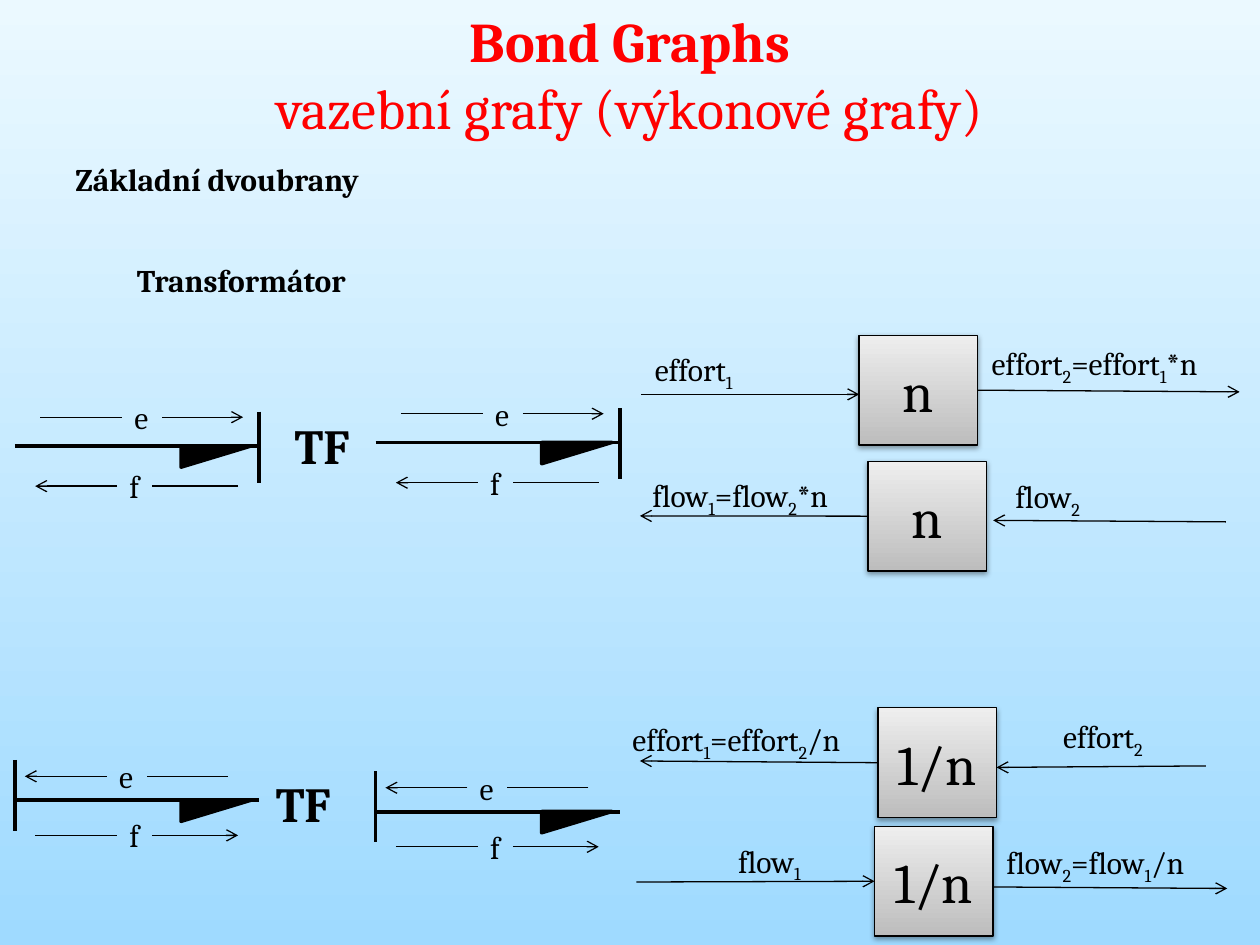
from dataclasses import dataclass
from typing import Optional

from lxml.etree import SubElement
from pptx import Presentation
from pptx.dml.color import RGBColor
from pptx.enum.shapes import MSO_CONNECTOR, MSO_SHAPE
from pptx.enum.text import MSO_ANCHOR, MSO_AUTO_SIZE, PP_ALIGN
from pptx.oxml.ns import qn
from pptx.util import Cm, Pt

FONT = "Cambria"
COLORS = {
    "title": "FF0000",
    "ink": "000000",
    "sky_top": "EBF9FF",
    "sky_bottom": "9FDAFF",
    "block_dark": "BDBDBD",
    "block_light": "EEEEEE",
}
LEFT, RIGHT = 1, 3  # connection sites of a rectangle
BLOCK_W, BLOCK_H = 2.39, 2.21
LABEL_H = 1.02


@dataclass
class Label:
    x: float
    y: float
    w: float
    texts: tuple[str, ...]  # texts made of digits become subscripts
    size: int = 18
    bold: bool = False
    h: float = LABEL_H


@dataclass
class Bond:
    x: float
    y: float
    forward: bool  # effort points right, causal bar at the right end


@dataclass
class Block:
    name: str
    x: float
    y: float
    text: str


@dataclass
class Wire:
    start: tuple[float, float]
    end: tuple[float, float]  # arrowhead here
    begin: Optional[tuple[str, int]] = None
    finish: Optional[tuple[str, int]] = None


LABELS = [
    Label(1.27, 3.1, 7.16, ("Základní dvoubrany",), bold=True),
    Label(2.51, 5.13, 5.46, ("Transformátor",), bold=True),
    Label(5.69, 8.26, 1.85, ("TF",), 28, True, 1.45),
    Label(5.31, 15.47, 1.85, ("TF",), 28, True, 1.45),
    Label(12.95, 6.93, 2.26, ("effort", "1")),
    Label(19.74, 6.81, 5.16, ("effort", "2", "=effort", "1", "*n")),
    Label(12.9, 9.47, 4.6, ("flow", "1", "=flow", "2", "*n")),
    Label(20.22, 9.5, 1.96, ("flow", "2")),
    Label(12.5, 14.4, 5.16, ("effort", "1", "=effort", "2", "/n")),
    Label(21.18, 14.33, 2.31, ("effort", "2")),
    Label(14.63, 16.84, 1.9, ("flow", "1")),
    Label(20.04, 16.87, 4.45, ("flow", "2", "=flow", "1", "/n")),
]
BONDS = [
    Bond(0.3, 8.99, True),
    Bond(7.57, 8.92, True),
    Bond(0.3, 16.13, False),
    Bond(7.57, 16.36, False),
]
BLOCKS = [
    Block("effort", 17.32, 6.76, "n"),
    Block("flow", 17.5, 9.3, "n"),
    Block("inverse effort", 17.7, 14.27, "1/n"),
    Block("inverse flow", 17.63, 16.66, "1/n"),
]
WIRES = [
    Wire((12.93, 7.95), (17.32, 7.95)),
    Wire((19.71, 7.86), (24.99, 7.9), begin=("effort", RIGHT)),
    Wire((17.5, 10.4), (12.9, 10.4), begin=("flow", LEFT)),
    Wire((24.71, 10.52), (20.02, 10.49)),
    Wire((17.7, 15.38), (12.9, 15.34), begin=("inverse effort", LEFT)),
    Wire((24.31, 15.44), (20.09, 15.47)),
    Wire((12.83, 17.78), (17.63, 17.78), finish=("inverse flow", LEFT)),
    Wire((20.04, 17.88), (24.74, 17.91)),
]


def rgb(name: str) -> RGBColor:
    return RGBColor.from_string(COLORS[name])


def add_run(p, text: str, size: int, color: str = "ink", bold: bool = False):
    r = p.add_run()
    r.text = text
    r.font.name, r.font.size, r.font.bold = FONT, Pt(size), bold
    r.font.color.rgb = rgb(color)
    return r


def set_gradient(fill, first: str, last: str, angle: float) -> None:
    fill.gradient()
    fill.gradient_angle = angle
    for stop, color, position in zip(fill.gradient_stops, (first, last), (0, 1)):
        stop.color.rgb = rgb(color)
        stop.position = position


def add_label(s, label: Label) -> None:
    box = s.shapes.add_textbox(Cm(label.x), Cm(label.y), Cm(label.w), Cm(label.h))
    tf = box.text_frame
    tf.word_wrap = False
    tf.auto_size = MSO_AUTO_SIZE.SHAPE_TO_FIT_TEXT
    for text in label.texts:
        r = add_run(tf.paragraphs[0], text, label.size, bold=label.bold)
        if text.isdigit():
            r.font._element.set("baseline", "-25000")


def add_line(s, start, end, width: float = 0.75, arrow: bool = False):
    line = s.shapes.add_connector(
        MSO_CONNECTOR.STRAIGHT, *(Cm(v) for v in (*start, *end)))
    line.line.color.rgb = rgb("ink")
    line.line.width = Pt(width)
    props = line._element.spPr
    if arrow:
        SubElement(props.find(qn("a:ln")), qn("a:tailEnd"), type="arrow")
    SubElement(props, qn("a:effectLst"))
    return line


def add_signal(s, x: float, y: float, letter: str, gap: float, to_right: bool) -> None:
    """A thin arrow interrupted by its letter."""
    near, far, end = x + 1.65, x + 1.65 + gap, x + 4.09
    if to_right:
        add_line(s, (x, y), (near, y))
        add_line(s, (far, y), (end, y), arrow=True)
    else:
        add_line(s, (end, y), (far, y))
        add_line(s, (near, y), (x, y), arrow=True)
    add_label(s, Label(near, y - 0.51, gap, (letter,)))


def add_bond(s, bond: Bond) -> None:
    x, y, length = bond.x, bond.y, 4.93
    add_line(s, (x, y), (x + length, y), 2.25)
    # Half arrowhead below the line
    sp = s.shapes.add_shape(
        MSO_SHAPE.RIGHT_TRIANGLE, Cm(x + 3.35), Cm(y), Cm(1.42), Cm(0.43))
    sp._element.spPr.find(qn("a:xfrm")).set("flipV", "1")
    sp.shadow.inherit = False
    sp.fill.solid()
    sp.fill.fore_color.rgb = sp.line.color.rgb = rgb("ink")
    sp.line.width = Pt(2)
    # Causal bar, then effort above and flow below
    bar_x, top = (x + length, y - 0.69) if bond.forward else (x, y - 0.81)
    add_line(s, (bar_x, top), (bar_x, top + 1.43), 2.25)
    e_dx, e_dy, f_dy = (0.51, -0.58, 0.81) if bond.forward else (0.2, -0.48, 0.71)
    add_signal(s, x + e_dx, y + e_dy, "e", 0.81, bond.forward)
    add_signal(s, x + 0.41, y + f_dy, "f", 0.71, not bond.forward)


def add_block(s, block: Block):
    sp = s.shapes.add_shape(
        MSO_SHAPE.RECTANGLE, Cm(block.x), Cm(block.y), Cm(BLOCK_W), Cm(BLOCK_H))
    set_gradient(sp.fill, "block_dark", "block_light", 90)
    sp.line.color.rgb = rgb("ink")
    sp.line.width = Pt(0.75)
    sp.shadow.inherit = False
    effects = sp._element.spPr.find(qn("a:effectLst"))
    shadow = SubElement(effects, qn("a:outerShdw"), blurRad="40000", dist="20000",
                        dir="5400000", rotWithShape="0")
    color = SubElement(shadow, qn("a:srgbClr"), val=COLORS["ink"])
    SubElement(color, qn("a:alpha"), val="38000")
    tf = sp.text_frame
    tf.vertical_anchor = MSO_ANCHOR.MIDDLE
    p = tf.paragraphs[0]
    p.alignment = PP_ALIGN.CENTER
    add_run(p, block.text, 32)
    return sp


def add_title(s) -> None:
    sp = s.shapes.title
    sp.left, sp.top, sp.width, sp.height = Cm(0), Cm(0), Cm(25.4), Cm(3)
    tf = sp.text_frame
    tf.vertical_anchor = MSO_ANCHOR.TOP
    tf.auto_size = MSO_AUTO_SIZE.NONE
    lines = (("Bond Graphs", True), ("vazební grafy (výkonové grafy)", False))
    for i, (text, bold) in enumerate(lines):
        p = tf.add_paragraph() if i else tf.paragraphs[0]
        p.alignment = PP_ALIGN.CENTER
        p.space_before = Pt(0)
        add_run(p, text, 32, "title", bold)


def main() -> None:
    prs = Presentation()
    prs.slide_width, prs.slide_height = Cm(25.4), Cm(19.05)
    s = prs.slides.add_slide(prs.slide_layouts[5])
    set_gradient(s.background.fill, "sky_top", "sky_bottom", 270)
    add_title(s)

    # Bonds on the left
    for bond in BONDS:
        add_bond(s, bond)

    # Gain blocks and their signals on the right
    blocks = {block.name: add_block(s, block) for block in BLOCKS}
    for wire in WIRES:
        line = add_line(s, wire.start, wire.end, arrow=True)
        if wire.begin:
            line.begin_connect(blocks[wire.begin[0]], wire.begin[1])
        if wire.finish:
            line.end_connect(blocks[wire.finish[0]], wire.finish[1])

    for label in LABELS:
        add_label(s, label)
    prs.save("out.pptx")


if __name__ == "__main__":
    main()
